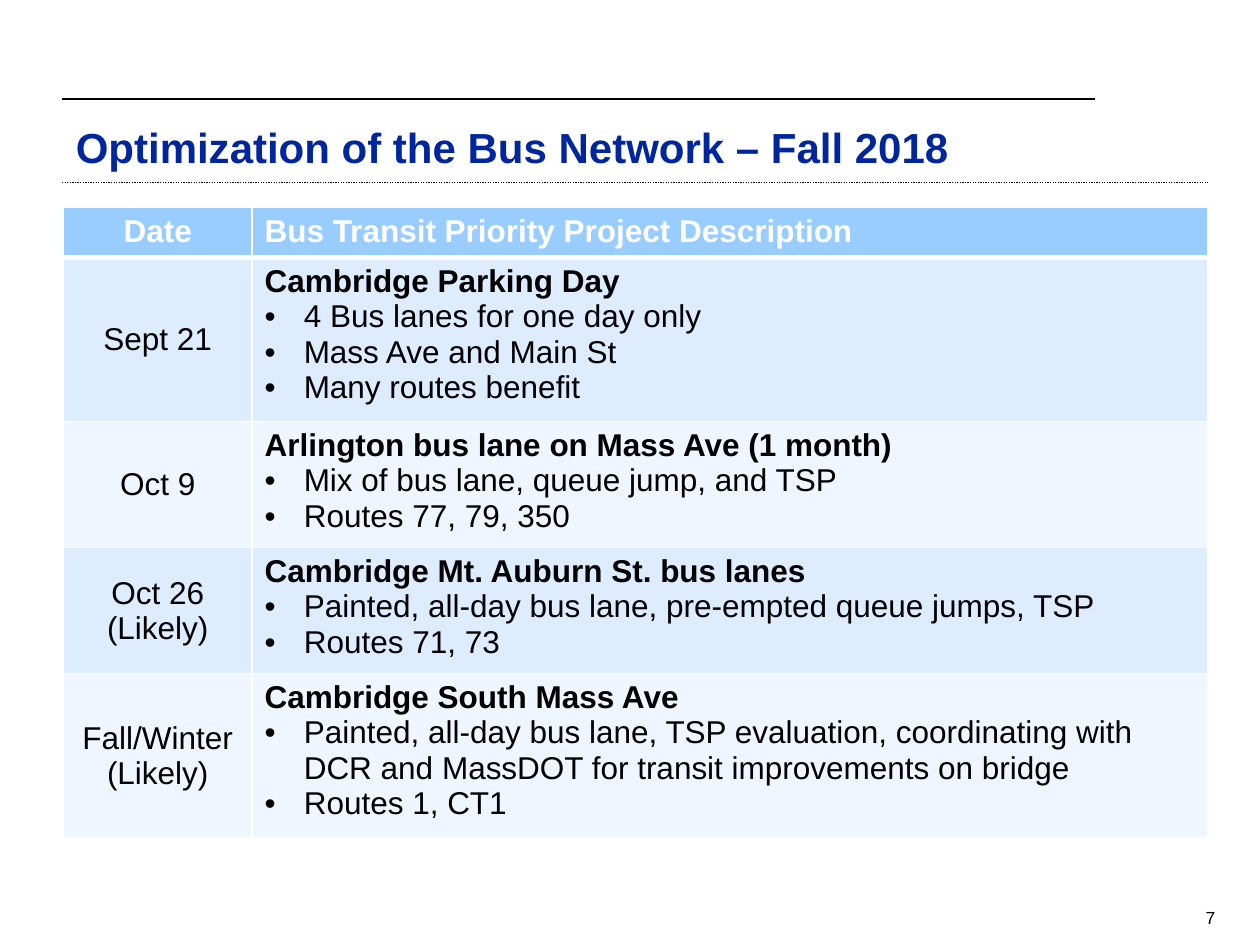
"""Build the slide listing bus network projects for fall 2018."""
import lxml.etree
import pptx
import pptx.dml.color
import pptx.enum.dml
import pptx.enum.shapes
import pptx.enum.text
import pptx.oxml.ns
import pptx.util

Cm = pptx.util.Cm
Pt = pptx.util.Pt
qn = pptx.oxml.ns.qn
ALIGN = pptx.enum.text.PP_ALIGN
ANCHOR = pptx.enum.text.MSO_ANCHOR


def color(hex_text):
    """Return the colour for a hex string."""
    return pptx.dml.color.RGBColor.from_string(hex_text)


def write(paragraph, text, size, hex_text, bold=False, alignment=ALIGN.LEFT):
    """Put one formatted run of text in a paragraph."""
    paragraph.alignment = alignment
    run = paragraph.add_run()
    run.text = text
    font_format = {"name": "Arial", "size": Pt(size), "bold": bold}
    for name, value in font_format.items():
        setattr(run.font, name, value)
    run.font.color.rgb = color(hex_text)


presentation = pptx.Presentation()
presentation.slide_width = Cm(25.4)
presentation.slide_height = Cm(19.05)
slide = presentation.slides.add_slide(presentation.slide_layouts[6])

rules = [
    (2.0, 22.07, 1, None),
    (3.68, 24.36, 0.75, pptx.enum.dml.MSO_LINE.ROUND_DOT),
]
for top, right, width, dash in rules:
    connector = slide.shapes.add_connector(
        pptx.enum.shapes.MSO_CONNECTOR.STRAIGHT, Cm(1.25), Cm(top), Cm(right), Cm(top))
    line_format = {"width": Pt(width), "dash_style": dash}
    for name, value in line_format.items():
        setattr(connector.line, name, value)
    connector.line.color.rgb = color("000000")
    lxml.etree.SubElement(connector._element.spPr, qn("a:effectLst"))

labels = [
    ((1.28, 2.29, 21.54, 1.3), "Optimization of the Bus Network – Fall 2018",
     24, "00269E", True, ALIGN.LEFT, ANCHOR.BOTTOM),
    ((22.64, 18.17, 2.11, 0.64), "7", 10, "000000", False, ALIGN.RIGHT, ANCHOR.MIDDLE),
]
for box, text, size, hex_text, bold, alignment, anchor in labels:
    shape = slide.shapes.add_textbox(*map(Cm, box))
    frame_format = {"word_wrap": True, "vertical_anchor": anchor}
    for name, value in frame_format.items():
        setattr(shape.text_frame, name, value)
    write(shape.text_frame.paragraphs[0], text, size, hex_text, bold, alignment)

projects = [
    ("Date", ["Bus Transit Priority Project Description"]),
    ("Sept 21", ["Cambridge Parking Day", "4 Bus lanes for one day only",
                 "Mass Ave and Main St", "Many routes benefit"]),
    ("Oct 9", ["Arlington bus lane on Mass Ave (1 month)",
               "Mix of bus lane, queue jump, and TSP", "Routes 77, 79, 350"]),
    ("Oct 26 (Likely)", ["Cambridge Mt. Auburn St. bus lanes",
                         "Painted, all-day bus lane, pre-empted queue jumps, TSP",
                         "Routes 71, 73"]),
    ("Fall/Winter (Likely)", [
        "Cambridge South Mass Ave",
        "Painted, all-day bus lane, TSP evaluation, coordinating with "
        "DCR and MassDOT for transit improvements on bridge",
        "Routes 1, CT1"]),
]
row_height = Cm(0.38)
table = slide.shapes.add_table(
    len(projects), 2, Cm(1.28), Cm(4.18), Cm(23.07), row_height * len(projects)).table
table.columns[0].width = Cm(3.8)
table.columns[1].width = Cm(19.27)

for row_index, (date, description) in enumerate(projects):
    is_header = row_index == 0
    text_color = "FFFFFF" if is_header else "000000"
    fill_color = "99CCFF" if is_header else ("EFF6FF", "DEECFF")[row_index % 2]
    border_widths = {"L": 1, "R": 1, "T": 3 if row_index == 1 else 1,
                     "B": 3 if is_header else 1}
    date_cell, description_cell = table.rows[row_index].cells
    for cell in (date_cell, description_cell):
        properties = cell._tc.get_or_add_tcPr()
        for side, width in border_widths.items():
            border = lxml.etree.SubElement(properties, qn("a:ln" + side), w=str(Pt(width)))
            border_fill = lxml.etree.SubElement(border, qn("a:solidFill"))
            lxml.etree.SubElement(border_fill, qn("a:srgbClr"), val="FFFFFF")
        cell.fill.solid()
        cell.fill.fore_color.rgb = color(fill_color)
    date_cell.vertical_anchor = ANCHOR.TOP if is_header else ANCHOR.MIDDLE
    write(date_cell.text_frame.paragraphs[0], date, 18, text_color, is_header, ALIGN.CENTER)

    frame = description_cell.text_frame
    write(frame.paragraphs[0], description[0], 18, text_color, True)
    for text in description[1:]:
        paragraph = frame.add_paragraph()
        paragraph_properties = paragraph._p.get_or_add_pPr()
        indent_format = {"marL": Cm(0.79), "indent": -Cm(0.79)}
        for name, value in indent_format.items():
            paragraph_properties.set(name, str(value))
        lxml.etree.SubElement(paragraph_properties, qn("a:buFont"), typeface="Arial")
        lxml.etree.SubElement(paragraph_properties, qn("a:buChar"), char="•")
        write(paragraph, text, 18, text_color)

presentation.save("out.pptx")
